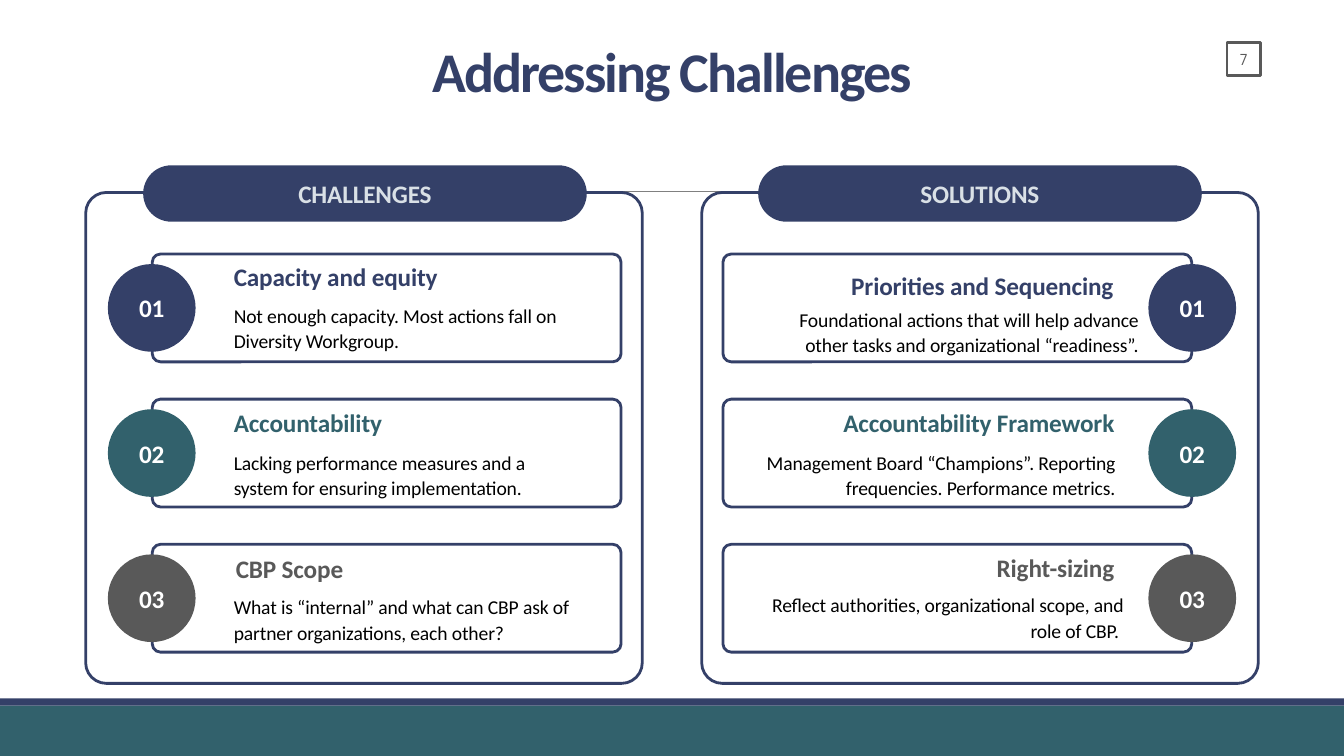
"""Build the Addressing Challenges slide."""
import dataclasses

import lxml.etree
import pptx
import pptx.dml.color
import pptx.enum.shapes
import pptx.enum.text
import pptx.oxml.ns
import pptx.util

Inches = pptx.util.Inches
Shape = pptx.enum.shapes.MSO_SHAPE
Align = pptx.enum.text.PP_ALIGN
Anchor = pptx.enum.text.MSO_ANCHOR


@dataclasses.dataclass(frozen=True)
class Theme:
    """Hold the colours, fonts and type sizes of the slide."""
    navy: str = "344068"
    teal: str = "32616C"
    gray: str = "595959"
    rule: str = "808080"
    pale: str = "D9E0E6"
    white: str = "FFFFFF"
    black: str = "000000"
    font: str = "Calibri"
    number_font: str = "Manrope"
    title: float = 40
    heading: float = 18
    body: float = 14
    number: float = 11
    outline: float = 2


THEME = Theme()


@dataclasses.dataclass(frozen=True)
class Item:
    """Hold one card's wording and the boxes of its two texts."""
    heading: str
    body: str
    heading_at: tuple
    body_at: tuple


@dataclasses.dataclass(frozen=True)
class Column:
    """Hold one panel's label, horizontal places, alignment and items."""
    label: str
    panel_left: float
    pill_left: float
    card_left: float
    badge_left: float
    align: Align
    items: tuple


CHALLENGES = Column("CHALLENGES", 0.85, 1.42, 1.51, 1.07, Align.LEFT, (
    Item("Capacity and equity",
         "Not enough capacity. Most actions fall on Diversity Workgroup.",
         (2.22, 2.54, 3.62, 0.4), (2.22, 2.95, 3.62, 0.61)),
    Item("Accountability",
         "Lacking performance measures and a system for ensuring implementation.",
         (2.22, 3.99, 3.62, 0.4), (2.22, 4.41, 3.62, 0.61)),
    Item("CBP Scope",
         "What is “internal” and what can CBP ask of partner organizations, each other?",
         (2.24, 5.44, 3.62, 0.4), (2.22, 5.84, 3.62, 0.59)),
))
SOLUTIONS = Column("SOLUTIONS", 6.96, 7.52, 7.17, 11.39, Align.RIGHT, (
    Item("Priorities and Sequencing",
         "Foundational actions that will help advance other tasks and organizational “readiness”.",
         (7.52, 2.63, 3.62, 0.4), (7.41, 2.99, 3.98, 0.59)),
    Item("Accountability Framework",
         "Management Board “Champions”. Reporting frequencies. Performance metrics.",
         (7.53, 3.99, 3.62, 0.4), (7.26, 4.41, 3.9, 0.59)),
    Item("Right-sizing",
         "Reflect authorities, organizational scope, and role of CBP. ",
         (7.53, 5.43, 3.62, 0.4), (7.26, 5.82, 3.98, 0.61)),
))
ROW_TOP, ROW_STEP = 2.52, 1.44


def rgb(value):
    """Turn a hex string into a colour."""
    return pptx.dml.color.RGBColor.from_string(value)


def write(shape, text, size, color, align=Align.CENTER, anchor=Anchor.MIDDLE,
          bold=True, font=THEME.font, tracking=-0.1, leading=None):
    """Write one formatted run into a shape."""
    frame = shape.text_frame
    frame.word_wrap = True
    frame.vertical_anchor = anchor
    para = frame.paragraphs[0]
    para.alignment = align
    if leading:
        para.line_spacing = pptx.util.Pt(leading)
    span = para.add_run()
    span.text = text
    span.font.name = font
    span.font.size = pptx.util.Pt(size)
    span.font.bold = bold
    span.font.color.rgb = rgb(color)
    span.font._element.set("spc", str(round(tracking * 100)))


def add_shape(page, kind, at, fill=None, line=None, radius=None):
    """Add a flat preset shape with an optional fill, outline and radius."""
    shape = page.shapes.add_shape(kind, *map(Inches, at))
    shape.shadow.inherit = False
    if fill:
        shape.fill.solid()
        shape.fill.fore_color.rgb = rgb(fill)
    else:
        shape.fill.background()
    if line:
        shape.line.color.rgb = rgb(line)
        shape.line.width = pptx.util.Pt(THEME.outline)
    else:
        shape.line.fill.background()
    if radius is not None:
        shape.adjustments[0] = radius
    return shape


def add_text(page, at, text, size, color, **style):
    """Add a text box holding one run."""
    box = page.shapes.add_textbox(*map(Inches, at))
    write(box, text, size, color, **style)


def add_rule(page, left, right, top):
    """Add the thin horizontal rule behind the panels."""
    rule = page.shapes.add_connector(
        pptx.enum.shapes.MSO_CONNECTOR.STRAIGHT,
        Inches(left), Inches(top), Inches(right), Inches(top))
    rule.line.color.rgb = rgb(THEME.rule)
    rule.line.width = pptx.util.Pt(0.5)
    lxml.etree.SubElement(rule._element.spPr, pptx.oxml.ns.qn("a:effectLst"))


def add_frame(page):
    """Add the footer bands, the rule and the page number."""
    add_shape(page, Shape.RECTANGLE, (0, 7, 13.33, 0.5), fill=THEME.teal)
    add_shape(page, Shape.RECTANGLE, (0, 6.93, 13.33, 0.07), fill=THEME.navy)
    add_rule(page, 1.31, 12.21, 1.9)
    number = add_shape(page, Shape.RECTANGLE, (12.17, 0.42, 0.33, 0.33), line=THEME.gray)
    frame = number.text_frame
    frame.margin_left = frame.margin_right = frame.margin_top = frame.margin_bottom = 0
    write(number, "7", THEME.number, THEME.gray, bold=False,
          font=THEME.number_font, tracking=1.5)


def set_title(page, text):
    """Place and format the title placeholder."""
    title = page.shapes.title
    title.left, title.top, title.width, title.height = map(Inches, (0.83, 0.31, 11.67, 0.77))
    write(title, text, THEME.title, THEME.navy, anchor=Anchor.BOTTOM, tracking=-1.4)


def add_column(page, column):
    """Add a panel with its label pill and numbered cards."""
    add_shape(page, Shape.ROUNDED_RECTANGLE, (column.panel_left, 1.91, 5.52, 4.87),
              line=THEME.navy, radius=0.042)
    pill = add_shape(page, Shape.ROUNDED_RECTANGLE, (column.pill_left, 1.64, 4.4, 0.56),
                     fill=THEME.navy, radius=0.5)
    write(pill, column.label, THEME.heading, THEME.pale)
    accents = (THEME.navy, THEME.teal, THEME.gray)
    for index, (item, accent) in enumerate(zip(column.items, accents)):
        top = ROW_TOP + index * ROW_STEP
        add_shape(page, Shape.ROUNDED_RECTANGLE, (column.card_left, top, 4.65, 1.07),
                  line=THEME.navy, radius=0.077)
        badge = add_shape(page, Shape.OVAL, (column.badge_left, top + 0.1, 0.87, 0.87),
                          fill=accent)
        write(badge, f"{index + 1:02}", THEME.heading, THEME.white)
        add_text(page, item.heading_at, item.heading, THEME.heading, accent,
                 align=column.align, anchor=Anchor.BOTTOM)
        add_text(page, item.body_at, item.body, THEME.body, THEME.black,
                 align=column.align, anchor=Anchor.TOP, bold=False, leading=18)


def main():
    """Build the deck and save it."""
    deck = pptx.Presentation()
    deck.slide_width, deck.slide_height = Inches(13.33), Inches(7.5)
    page = deck.slides.add_slide(deck.slide_layouts.get_by_name("Title Only"))
    add_frame(page)
    set_title(page, "Addressing Challenges")
    for column in (CHALLENGES, SOLUTIONS):
        add_column(page, column)
    deck.save("out.pptx")


if __name__ == "__main__":
    main()
